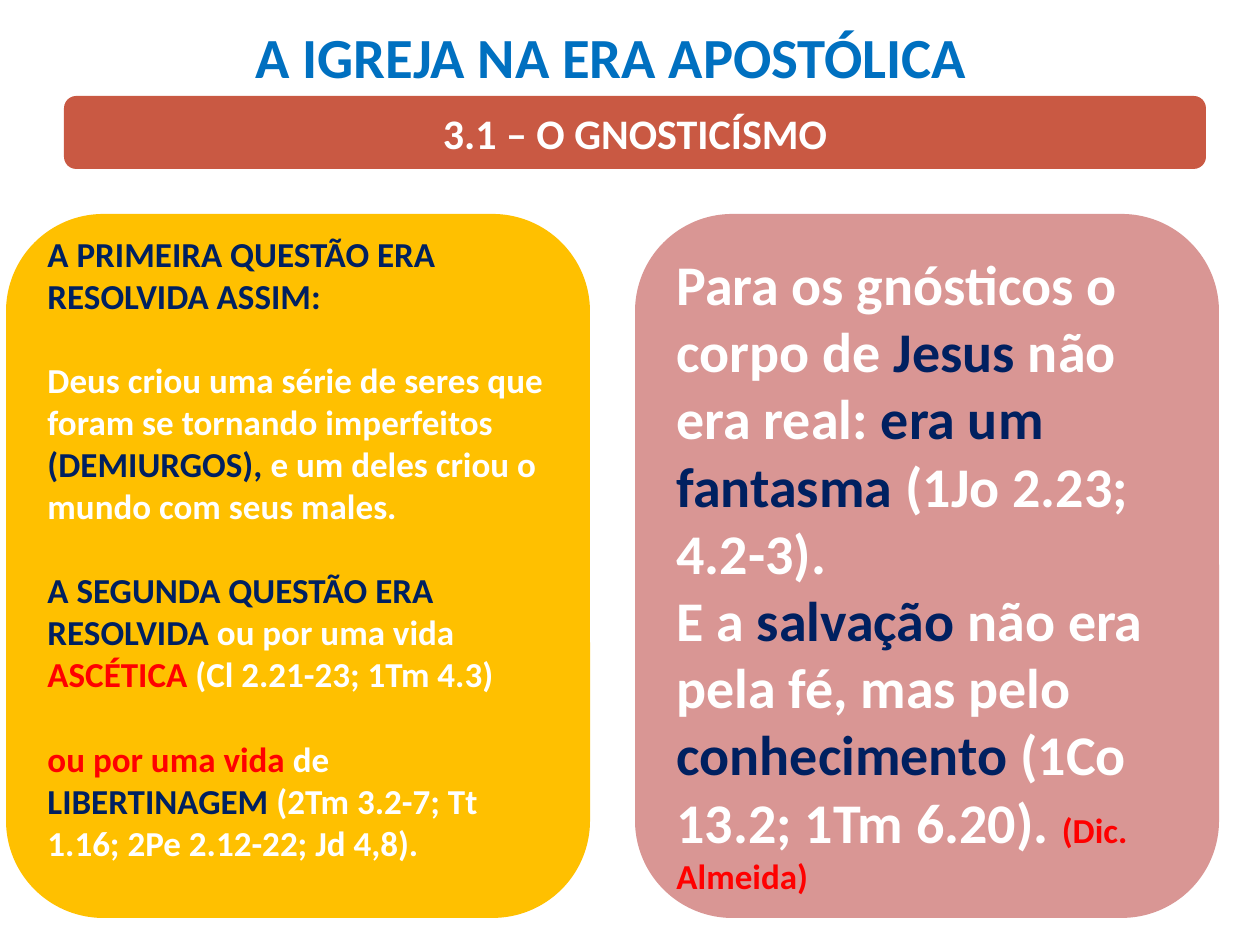
"""Builds the slide about Gnosticism in the apostolic church."""
import pptx
import pptx.util
from pptx.dml.color import RGBColor
from pptx.enum.shapes import MSO_SHAPE
from pptx.enum.text import MSO_ANCHOR, PP_ALIGN

FONT = "Calibri"
WHITE = RGBColor(0xFF, 0xFF, 0xFF)
NAVY = RGBColor(0x00, 0x20, 0x60)
RED = RGBColor(0xFF, 0x00, 0x00)
BLUE = RGBColor(0x00, 0x70, 0xC0)
BRICK = RGBColor(0xC9, 0x59, 0x43)
AMBER = RGBColor(0xFF, 0xC0, 0x00)
ROSE = RGBColor(0xD9, 0x96, 0x94)

QUESTIONS = [
    [("A PRIMEIRA QUESTÃO ERA RESOLVIDA ASSIM:", NAVY)],
    [("Deus criou uma série de seres que foram se tornando imperfeitos ", WHITE),
     ("(DEMIURGOS), ", NAVY),
     ("e um deles criou o mundo com seus males.", WHITE)],
    [("A SEGUNDA QUESTÃO ERA RESOLVIDA ", NAVY), ("ou por uma vida ", WHITE),
     ("ASCÉTICA", RED), (" (Cl 2.21-23; 1Tm 4.3)", WHITE)],
    [("ou por uma vida ", RED), ("de ", WHITE), ("LIBERTINAGEM", NAVY),
     (" (2Tm 3.2-7; Tt 1.16; 2Pe 2.12-22; Jd 4,8).", WHITE)],
]
BELIEFS = [
    [("Para os gnósticos o corpo de ", WHITE), ("Jesus", NAVY),
     (" não era real: ", WHITE), ("era um fantasma ", NAVY),
     ("(1Jo 2.23; 4.2-3).", WHITE)],
    [("E a ", WHITE), ("salvação ", NAVY), ("não era pela fé, mas pelo ", WHITE),
     ("conhecimento", NAVY), (" (1Co 13.2; 1Tm 6.20). ", WHITE),
     ("(Dic. Almeida)", RED, 20)],
]


def px(n):
    return pptx.util.Emu(round(n * 914400 / 126))


def write(tf, paragraphs, size, align=PP_ALIGN.LEFT, anchor=MSO_ANCHOR.MIDDLE,
          gap=0, inset_top=6, inset_bottom=6):
    tf.word_wrap = True
    tf.vertical_anchor = anchor
    tf.margin_left = tf.margin_right = px(13)
    tf.margin_top, tf.margin_bottom = px(inset_top), px(inset_bottom)
    for i, runs in enumerate(paragraphs):
        p = tf.add_paragraph() if i else tf.paragraphs[0]
        p.alignment = align
        p.space_before = pptx.util.Pt(gap if i else 0)
        for text, color, *own_size in runs:
            r = p.add_run()
            r.text = text
            r.font.name = FONT
            r.font.bold = True
            r.font.size = pptx.util.Pt(own_size[0] if own_size else size)
            r.font.color.rgb = color


def add_title(slide, text):
    sp = slide.shapes.title
    sp.left, sp.top, sp.width, sp.height = px(44), px(16), px(1134), px(69)
    write(sp.text_frame, [[(text, BLUE)]], 32.4, align=PP_ALIGN.CENTER,
          anchor=MSO_ANCHOR.TOP)


def add_panel(slide, left, top, width, height, fill, paragraphs, size, **layout):
    sp = slide.shapes.add_shape(MSO_SHAPE.ROUNDED_RECTANGLE,
                                px(left), px(top), px(width), px(height))
    sp.shadow.inherit = False
    sp.fill.solid()
    sp.fill.fore_color.rgb = fill
    sp.line.fill.background()
    write(sp.text_frame, paragraphs, size, **layout)


def main():
    prs = pptx.Presentation()
    prs.slide_width, prs.slide_height = px(1260), px(945)
    slide = prs.slides.add_slide(prs.slide_layouts[5])
    add_title(slide, "A IGREJA NA ERA APOSTÓLICA")
    add_panel(slide, 64, 96, 1142, 73, BRICK, [[("3.1 – O GNOSTICÍSMO", WHITE)]],
              24, align=PP_ALIGN.CENTER)
    add_panel(slide, 6, 214, 584, 704, AMBER, QUESTIONS, 20,
              gap=24, inset_bottom=42)
    add_panel(slide, 635, 214, 584, 704, ROSE, BELIEFS, 32, inset_top=20)
    prs.save("out.pptx")


if __name__ == "__main__":
    main()
